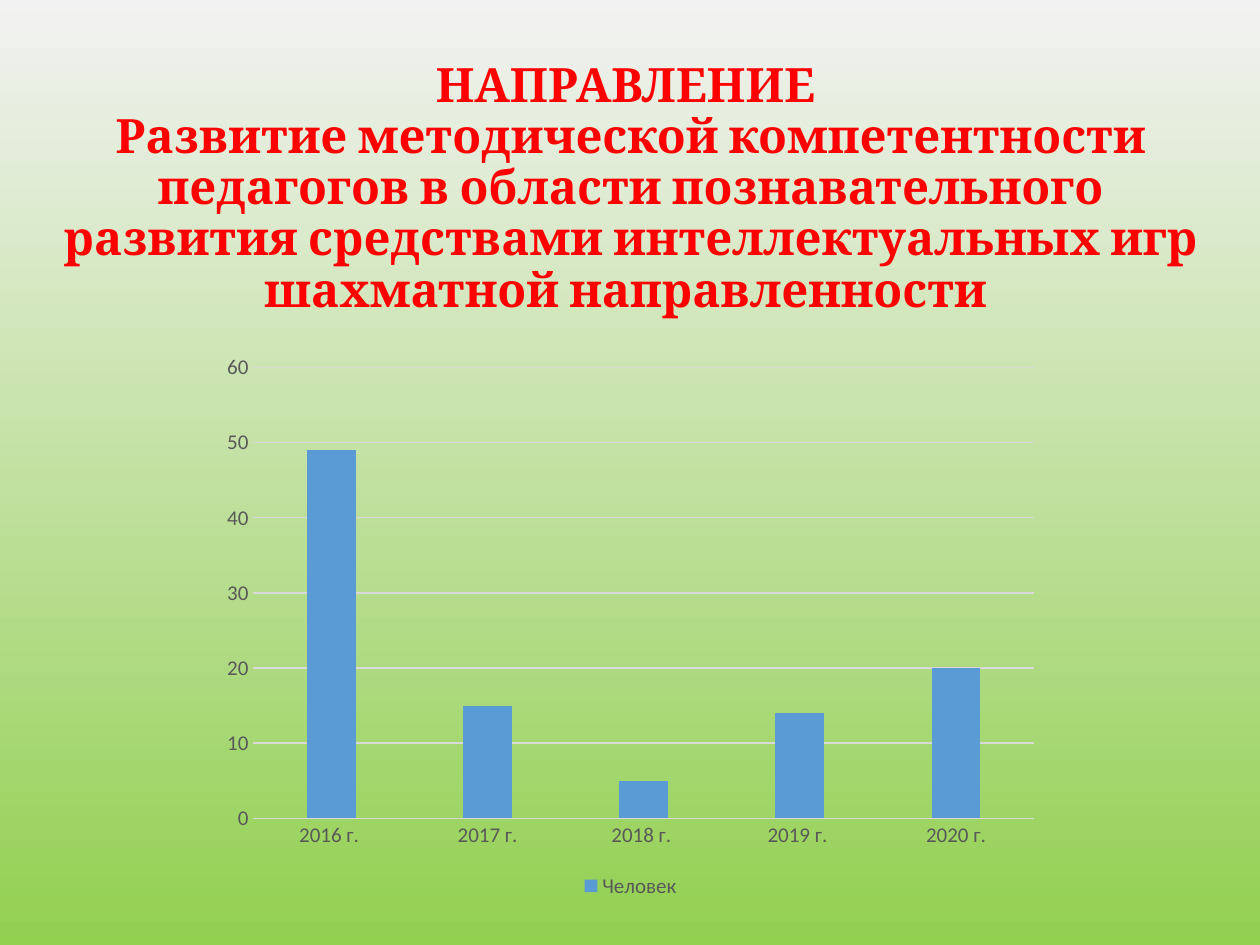
from lxml import etree
from pptx import Presentation
from pptx import util as u
from pptx.chart.data import CategoryChartData
from pptx.dml.color import RGBColor
from pptx.enum import chart as charts, text
from pptx.oxml.ns import qn

HEADING = [
    "НАПРАВЛЕНИЕ ",
    "Развитие методической компетентности педагогов в области познавательного "
    "развития средствами интеллектуальных игр шахматной направленности ",
]
SERIES = "Человек"
PEOPLE = {"2016 г. ": 49, "2017 г.": 15, "2018 г. ": 5, "2019 г. ": 14, "2020 г.": 20}
BACKGROUND = ["F2F2F2", "92D050"]
RED, BLUE, GREY, LINE = "FF0000", "5B9BD5", "595959", "D9D9D9"
HEADING_BOX = (0.28, 0.44, 9.45, 6.75)
CHART_BOX = (1.67, 2.73, 6.67, 4.44)


def color(value):
    return RGBColor.from_string(value)


def inches(box):
    return [u.Inches(length) for length in box]


def style_font(font, name, size, value):
    font.name, font.size = name, u.Pt(size)
    font.color.rgb = color(value)


def style_line(line):
    line.color.rgb = color(LINE)
    line.width = u.Pt(0.75)


def paint_background(slide):
    fill = slide.background.fill
    fill.gradient()
    fill.gradient_angle = 270
    for stop, value, position in zip(fill.gradient_stops, BACKGROUND, (0, 1)):
        stop.color.rgb = color(value)
        stop.position = position


def add_heading(slide):
    title = slide.shapes.title
    title.element.getparent().remove(title.element)
    body = slide.placeholders[1]
    body.left, body.top, body.width, body.height = inches(HEADING_BOX)
    frame = body.text_frame
    frame.word_wrap = True
    frame.auto_size = text.MSO_AUTO_SIZE.NONE
    frame.vertical_anchor = text.MSO_ANCHOR.TOP
    paragraph = frame.paragraphs[0]
    properties = paragraph._p.get_or_add_pPr()
    properties.set("marL", "0")
    properties.set("indent", "0")
    etree.SubElement(properties, qn("a:buNone"))
    paragraph.alignment = text.PP_ALIGN.CENTER
    paragraph.line_spacing = 0.9
    paragraph.space_before = u.Pt(0)
    for index, line in enumerate(HEADING):
        if index:
            paragraph.add_line_break()
        run = paragraph.add_run()
        run.text = line
        style_font(run.font, "Cambria", 27, RED)
        run.font.bold = True


def add_people_chart(slide):
    data = CategoryChartData()
    data.categories = list(PEOPLE)
    data.add_series(SERIES, list(PEOPLE.values()))
    kind = charts.XL_CHART_TYPE.COLUMN_CLUSTERED
    chart = slide.shapes.add_chart(kind, *inches(CHART_BOX), data).chart
    style_font(chart.font, "Calibri", 10, "000000")
    chart.has_title = False
    chart.has_legend = True
    chart.legend.position = charts.XL_LEGEND_POSITION.BOTTOM
    chart.legend.include_in_layout = False
    style_font(chart.legend.font, "Calibri", 12, GREY)

    plot = chart.plots[0]
    plot.gap_width, plot.overlap = 219, -27
    plot.vary_by_categories = False
    fill = plot.series[0].format.fill
    fill.solid()
    fill.fore_color.rgb = color(BLUE)

    for axis in (chart.category_axis, chart.value_axis):
        axis.major_tick_mark = axis.minor_tick_mark = charts.XL_TICK_MARK.NONE
        style_font(axis.tick_labels.font, "Calibri", 12, GREY)
    style_line(chart.category_axis.format.line)
    values = chart.value_axis
    values.minimum_scale, values.maximum_scale, values.major_unit = 0, 60, 10
    values.format.line.fill.background()
    style_line(values.major_gridlines.format.line)


def main():
    presentation = Presentation()
    presentation.slide_width, presentation.slide_height = inches((10, 7.5))
    slide = presentation.slides.add_slide(presentation.slide_layouts[1])
    paint_background(slide)
    add_heading(slide)
    add_people_chart(slide)
    presentation.save("out.pptx")


if __name__ == "__main__":
    main()
